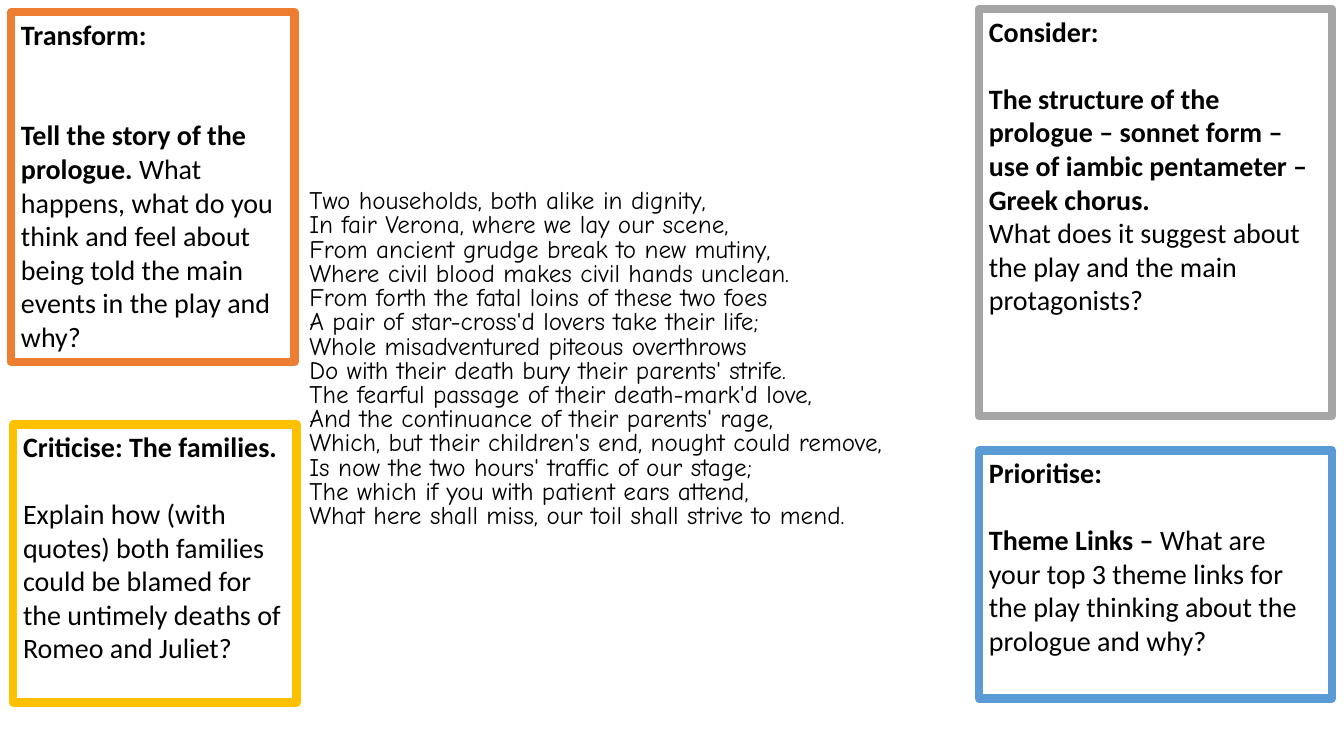
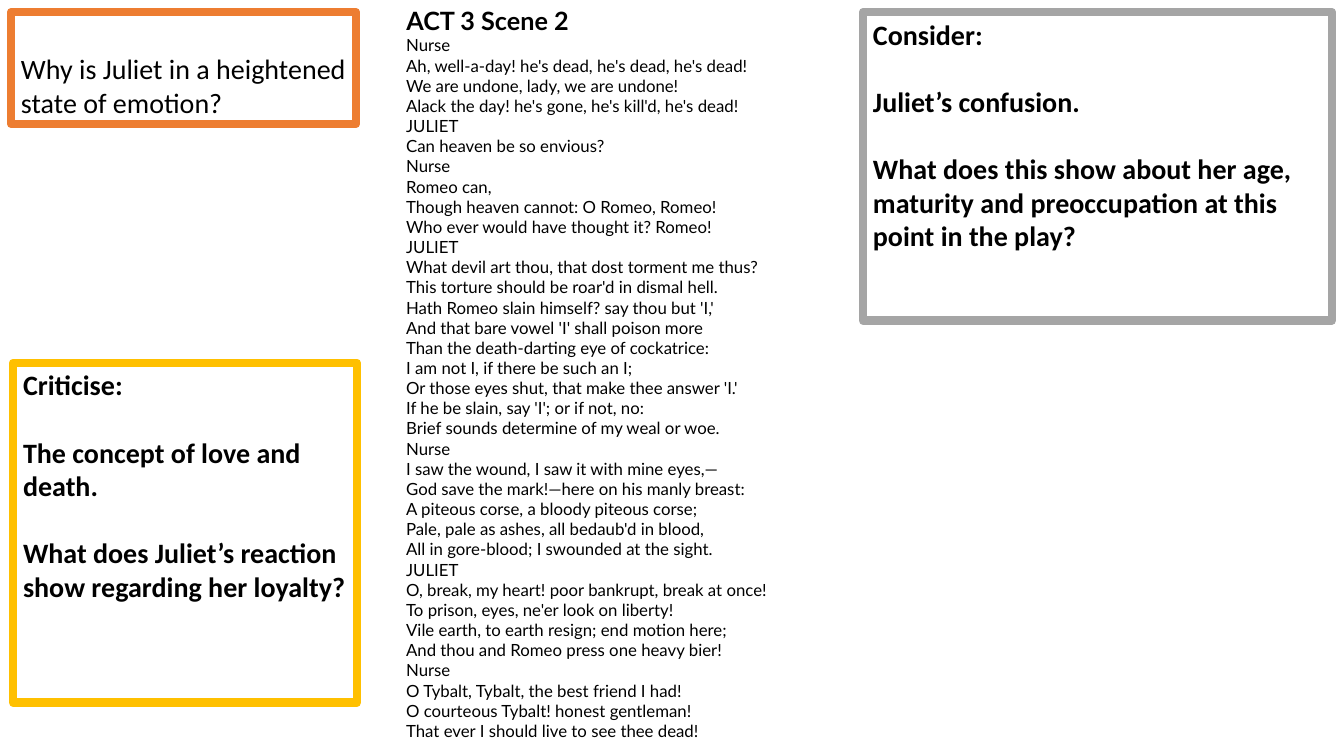
from pptx import Presentation
from pptx.dml.color import RGBColor
from pptx.enum.shapes import MSO_SHAPE
from pptx.enum.text import MSO_ANCHOR, MSO_AUTO_SIZE, PP_ALIGN
from pptx.util import Inches, Pt

RECTANGLE = MSO_SHAPE.RECTANGLE
TOP, BOTTOM = MSO_ANCHOR.TOP, MSO_ANCHOR.BOTTOM
LEFT = PP_ALIGN.LEFT
FIXED = MSO_AUTO_SIZE.NONE
TITLE_ONLY, BLANK = 5, 6

COLOURS = {
    "text": "000000",
    "paper": "FFFFFF",
    "transform": "ED7D31",
    "consider": "A5A5A5",
    "criticise": "FFC000",
    "prioritise": "5B9BD5",
}
PLAIN = {"name": "Calibri", "size": Pt(20), "bold": False}
STRONG = {**PLAIN, "bold": True}
VERSE = {"name": "Comic Neue", "size": Pt(18), "bold": False}
SCENE = {"name": "Lato", "size": Pt(12), "bold": False}
SCENE_TITLE = {"name": "Lato", "size": Pt(18), "bold": True}
GAP = 24

PROLOGUE_CARDS = [
    ("transform", (0.11, 0.12, 2.81, 3.47), TOP, [
        (0, [("Transform:", STRONG)]),
        (2 * GAP, [
            ("Tell the story of the prologue. ", STRONG),
            ("What happens, what do you think and feel about being told "
             "the main events in the play and why?", PLAIN),
        ]),
    ]),
    ("consider", (9.71, 0.09, 3.5, 4.04), TOP, [
        (0, [("Consider:", STRONG)]),
        (GAP, [("The structure of the prologue – sonnet form – use of "
                "iambic pentameter – Greek chorus.", STRONG)]),
        (0, [("What does it suggest about the play and the main "
              "protagonists?", PLAIN)]),
    ]),
    ("criticise", (0.13, 4.21, 2.81, 2.76), TOP, [
        (0, [("Criticise: The families.", STRONG)]),
        (GAP, [("Explain how (with quotes) both families could be blamed "
                "for the untimely deaths of Romeo and Juliet?", PLAIN)]),
    ]),
    ("prioritise", (9.71, 4.47, 3.5, 2.46), TOP, [
        (0, [("Prioritise:", STRONG)]),
        (GAP, [
            ("Theme Links – ", STRONG),
            ("What are your top 3 theme links for the play thinking about "
             "the prologue and why?", PLAIN),
        ]),
    ]),
]

SCENE_CARDS = [
    ("transform", (0.11, 0.12, 3.42, 1.11), BOTTOM, [
        (0, [("Why is Juliet in a heightened state of emotion?", PLAIN)]),
    ]),
    ("consider", (8.56, 0.12, 4.65, 3.06), TOP, [
        (0, [("Consider:", STRONG)]),
        (GAP, [("Juliet’s confusion.", STRONG)]),
        (GAP, [("What does this show about her age, maturity and "
                "preoccupation at this point in the play?", STRONG)]),
    ]),
    ("criticise", (0.13, 3.6, 3.41, 3.37), TOP, [
        (0, [("Criticise:", STRONG)]),
        (GAP, [("The concept of love and death.", STRONG)]),
        (GAP, [("What does Juliet’s reaction show regarding her loyalty?",
                STRONG)]),
    ]),
]

PROLOGUE_LINES = [
    "Two households, both alike in dignity,",
    "In fair Verona, where we lay our scene,",
    "From ancient grudge break to new mutiny,",
    "Where civil blood makes civil hands unclean.",
    "From forth the fatal loins of these two foes",
    "A pair of star-cross'd lovers take their life;",
    "Whole misadventured piteous overthrows",
    "Do with their death bury their parents' strife.",
    "The fearful passage of their death-mark'd love,",
    "And the continuance of their parents' rage,",
    "Which, but their children's end, nought could remove,",
    "Is now the two hours' traffic of our stage;",
    "The which if you with patient ears attend,",
    "What here shall miss, our toil shall strive to mend.",
]

SCENE_SPEECHES = [
    ("Nurse", [
        "Ah, well-a-day! he's dead, he's dead, he's dead!",
        "We are undone, lady, we are undone!",
        "Alack the day! he's gone, he's kill'd, he's dead!",
    ]),
    ("JULIET", ["Can heaven be so envious?"]),
    ("Nurse", [
        "Romeo can,",
        "Though heaven cannot: O Romeo, Romeo!",
        "Who ever would have thought it? Romeo!",
    ]),
    ("JULIET", [
        "What devil art thou, that dost torment me thus?",
        "This torture should be roar'd in dismal hell.",
        "Hath Romeo slain himself? say thou but 'I,'",
        "And that bare vowel 'I' shall poison more",
        "Than the death-darting eye of cockatrice:",
        "I am not I, if there be such an I;",
        "Or those eyes shut, that make thee answer 'I.'",
        "If he be slain, say 'I'; or if not, no:",
        "Brief sounds determine of my weal or woe.",
    ]),
    ("Nurse", [
        "I saw the wound, I saw it with mine eyes,—",
        "God save the mark!—here on his manly breast:",
        "A piteous corse, a bloody piteous corse;",
        "Pale, pale as ashes, all bedaub'd in blood,",
        "All in gore-blood; I swounded at the sight.",
    ]),
    ("JULIET", [
        "O, break, my heart! poor bankrupt, break at once!",
        "To prison, eyes, ne'er look on liberty!",
        "Vile earth, to earth resign; end motion here;",
        "And thou and Romeo press one heavy bier!",
    ]),
    ("Nurse", [
        "O Tybalt, Tybalt, the best friend I had!",
        "O courteous Tybalt! honest gentleman!",
        "That ever I should live to see thee dead!",
    ]),
]


def colour(name):
    return RGBColor.from_string(COLOURS[name])


def place(bounds):
    return [Inches(length) for length in bounds]


def write(frame, paragraphs, anchor=TOP, line_spacing=1.0):
    frame.word_wrap = True
    frame.auto_size = FIXED
    frame.vertical_anchor = anchor
    for index, (space, spans) in enumerate(paragraphs):
        para = frame.add_paragraph() if index else frame.paragraphs[0]
        para.alignment = LEFT
        para.space_before = Pt(space)
        para.line_spacing = line_spacing
        for text, style in spans:
            span = para.add_run()
            span.text = text
            span.font.color.rgb = colour("text")
            for attribute, value in style.items():
                setattr(span.font, attribute, value)


def add_card(page, border, bounds, anchor, paragraphs):
    card = page.shapes.add_shape(RECTANGLE, *place(bounds))
    card.shadow.inherit = False
    card.fill.solid()
    card.fill.fore_color.rgb = colour("paper")
    card.line.color.rgb = colour(border)
    card.line.width = Pt(6)
    write(card.text_frame, paragraphs, anchor)


def add_extract(page, bounds, lines, style, line_spacing=1.0):
    box = page.shapes.add_textbox(*place(bounds))
    paragraphs = [(0, [(line, style)]) for line in lines]
    write(box.text_frame, paragraphs, line_spacing=line_spacing)


def add_title(page, bounds, text):
    title = page.shapes.title
    title.left, title.top, title.width, title.height = place(bounds)
    write(title.text_frame, [(0, [(text, SCENE_TITLE)])])


def add_page(deck, layout, cards):
    page = deck.slides.add_slide(deck.slide_layouts[layout])
    for card in cards:
        add_card(page, *card)
    return page


def build_prologue(deck):
    page = add_page(deck, BLANK, PROLOGUE_CARDS)
    add_extract(page, (2.97, 1.84, 6.61, 3.5), PROLOGUE_LINES, VERSE, 0.8)


def build_scene(deck, left=3.93, width=4.1, title_height=0.35):
    page = add_page(deck, TITLE_ONLY, SCENE_CARDS)
    add_title(page, (left, 0, width, title_height), "ACT 3 Scene 2")
    lines = [line for speaker, speech in SCENE_SPEECHES
             for line in [speaker, *speech]]
    add_extract(page, (left, title_height - 0.05, width, 7.17), lines, SCENE)


def main():
    deck = Presentation()
    deck.slide_width, deck.slide_height = Inches(13.33), Inches(7.5)
    build_prologue(deck)
    build_scene(deck)
    deck.save("out.pptx")


if __name__ == "__main__":
    main()
